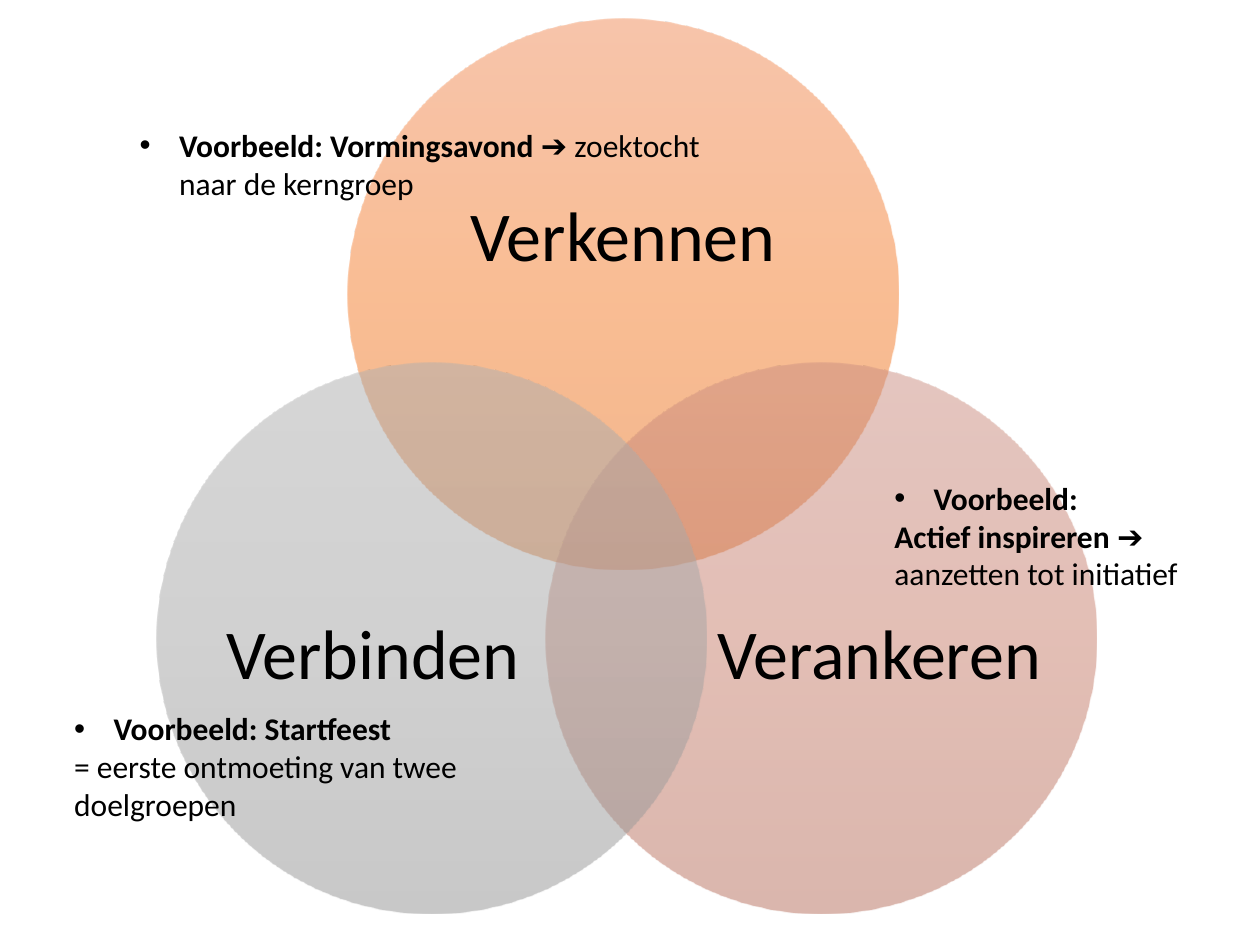
from lxml import etree
from pptx import Presentation
from pptx import util as u
from pptx.dml.color import RGBColor
from pptx.enum import shapes, text
from pptx.oxml.ns import qn

Pt = u.Pt
FONT = "Calibri"
COLORS = {
    "ink": "000000",
    "orange": ("F18C57", "F67B28", "E56C19"),
    "rose": ("CB8F81", "C97E6B", "B76D5B"),
    "grey": ("AFAFAF", "A5A5A5", "939393"),
}

# Circles: label, colour, circle left and top, label box
SIZE = 314.6
CIRCLES = [
    ("Verkennen", "orange", (198.7, 10.8), (240.5, 65.5, 231.1, 141.8)),
    ("Verankeren", "rose", (311.8, 207.4), (408.2, 288.7, 188.6, 172.8)),
    ("Verbinden", "grey", (89.3, 207.4), (118.8, 288.7, 188.6, 172.8)),
]

# Notes: box, then paragraphs of (words, bold) runs; the first has a bullet
NOTES = [
    ((72.7, 68.4, 339.8, 51.1), [
        [("Voorbeeld: Vormingsavond ", True),
         ("➔ zoektocht naar de kerngroep", False)]]),
    ((35.3, 401.8, 239, 94.3), [
        [("Voorbeeld: Startfeest", True)],
        [("= eerste ontmoeting van twee doelgroepen", False)]]),
    ((504, 270, 190.1, 94.3), [
        [("Voorbeeld:", True)],
        [("Actief inspireren ➔ ", True), ("aanzetten tot initiatief", False)]]),
]
INDENT = 22.5


def style(para, size):
    para.font.name = FONT
    para.font.size = Pt(size)
    para.font.color.rgb = RGBColor.from_string(COLORS["ink"])


def shade(shape, hues):
    """Fill downwards with three evenly spaced, half-transparent stops."""
    shape.fill.gradient()
    shape.fill.gradient_angle = 270
    stops = next(shape._element.spPr.iter(qn("a:gsLst")))
    for old in list(stops):
        stops.remove(old)
    for i, hue in enumerate(hues):
        stop = etree.SubElement(stops, qn("a:gs"), pos=str(i * 50000))
        tone = etree.SubElement(stop, qn("a:srgbClr"), val=hue)
        etree.SubElement(tone, qn("a:alpha"), val="50000")


def bullet(para):
    props = para._p.get_or_add_pPr()
    step = Pt(INDENT)
    props.set("marL", str(step))
    props.set("indent", str(-step))
    etree.SubElement(props, qn("a:buFont"), typeface="Arial")
    etree.SubElement(props, qn("a:buChar"), char="•")


def add_box(parent, box):
    frame = parent.add_textbox(*map(Pt, box)).text_frame
    frame.word_wrap = True
    return frame


deck = Presentation()
deck.slide_width, deck.slide_height = Pt(720), Pt(540)
slide = deck.slides.add_slide(deck.slide_layouts[6])

# Venn diagram
venn = slide.shapes.add_group_shape().shapes
for label, hue, spot, box in CIRCLES:
    disc = venn.add_shape(shapes.MSO_SHAPE.OVAL, *map(Pt, (*spot, SIZE, SIZE)))
    disc.shadow.inherit = False
    disc.line.fill.background()
    shade(disc, COLORS[hue])

    frame = add_box(venn, box)
    frame.margin_left = frame.margin_right = 0
    frame.margin_top = frame.margin_bottom = 0
    frame.vertical_anchor = text.MSO_ANCHOR.MIDDLE
    para = frame.paragraphs[0]
    para.text = label
    para.alignment = text.PP_ALIGN.CENTER
    para.line_spacing = 0.9
    style(para, 40)

# Example notes
for box, paras in NOTES:
    frame = add_box(slide.shapes, box)
    for i, runs in enumerate(paras):
        para = frame.add_paragraph() if i else frame.paragraphs[0]
        if i == 0:
            bullet(para)
        style(para, 18)
        for words, bold in runs:
            run = para.add_run()
            run.text = words
            run.font.bold = bold

deck.save("out.pptx")
